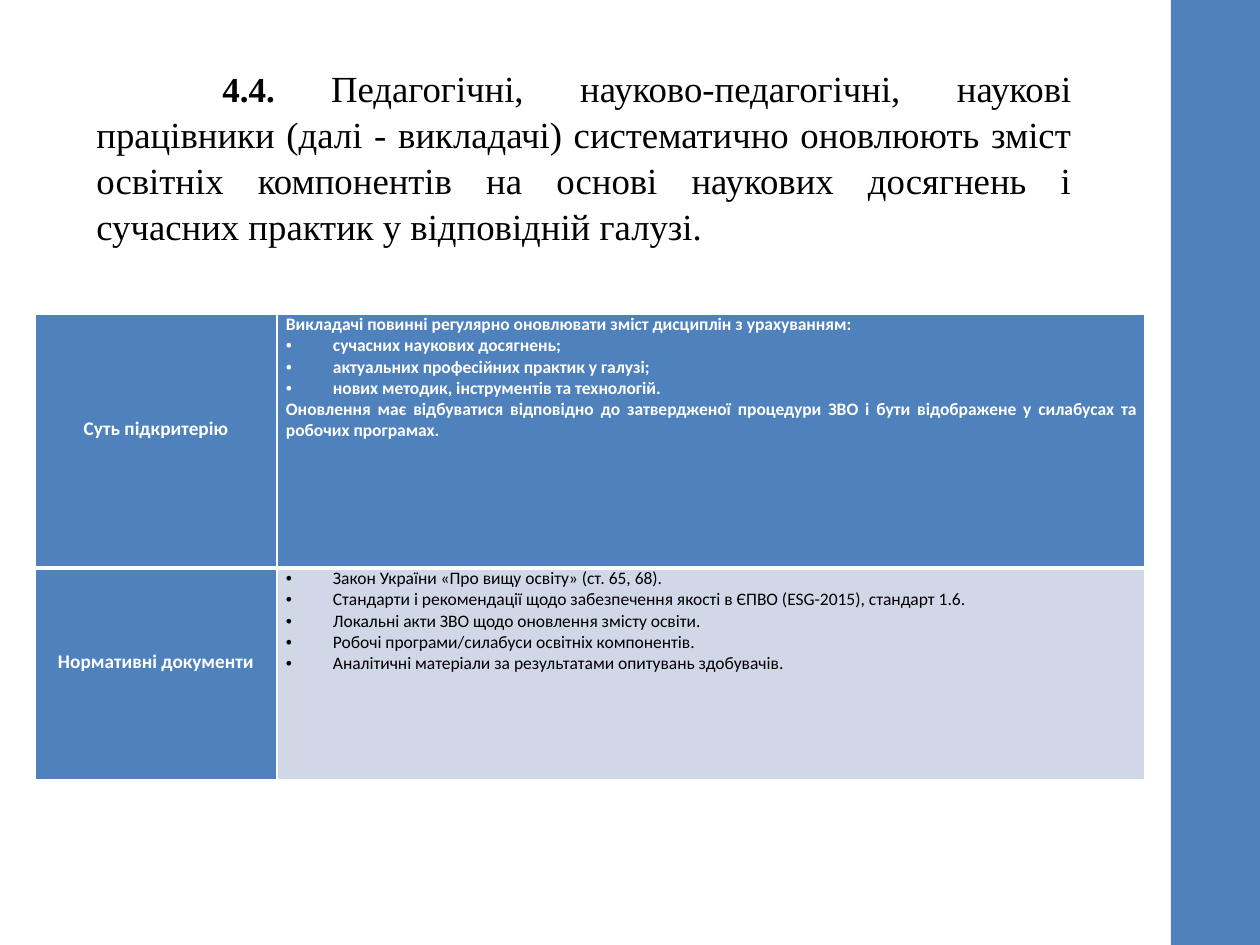
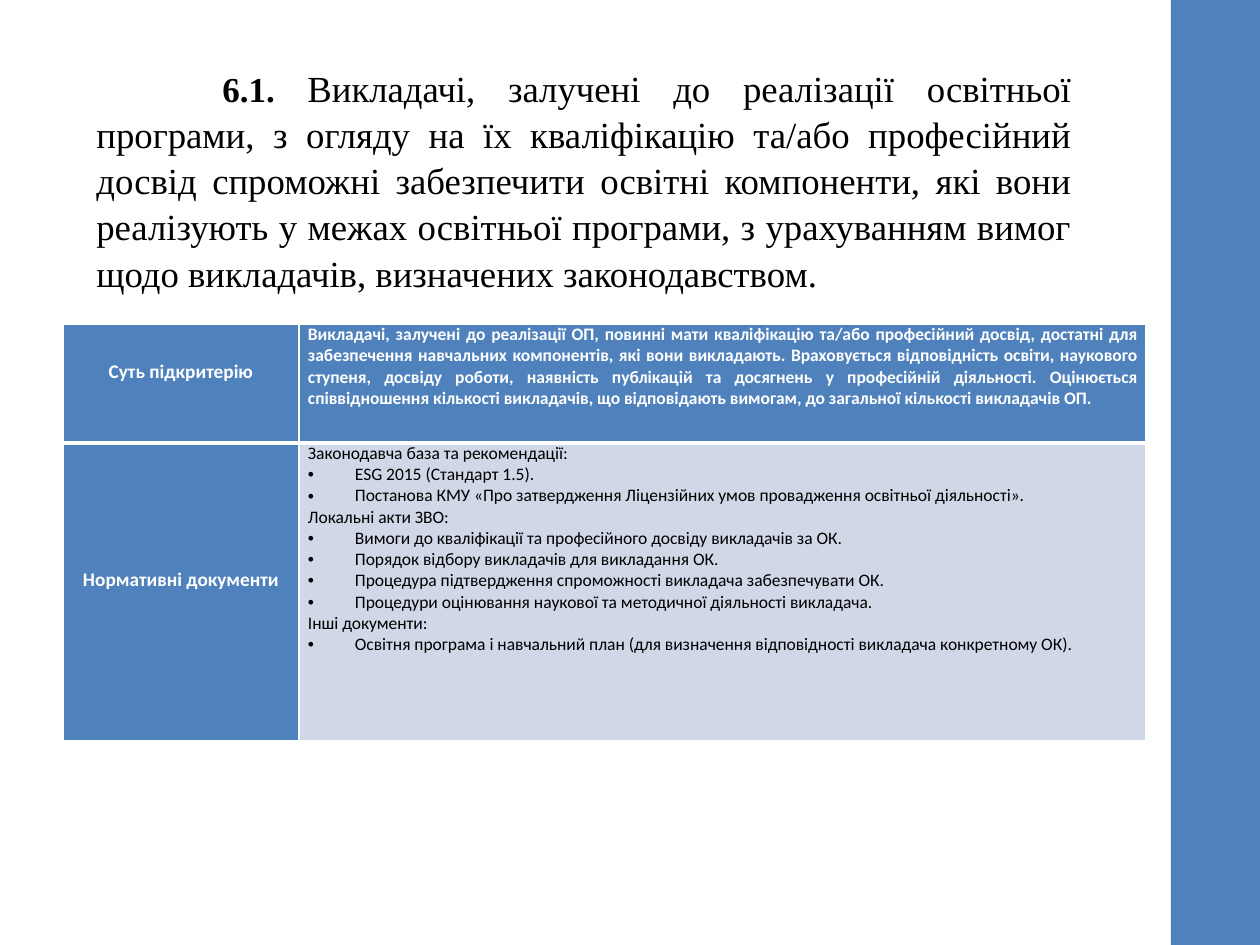
from lxml.etree import SubElement, Element
from pptx import Presentation
from pptx.dml.color import RGBColor
from pptx.enum.shapes import MSO_SHAPE
from pptx.enum.text import MSO_ANCHOR as Anchor, PP_ALIGN as Align
from pptx.oxml.ns import qn
from pptx.util import Pt

EMU_PER_PX = 914400 / 126
BLUE = RGBColor(0x4F, 0x81, 0xBD)
PALE = RGBColor(0xD0, 0xD8, 0xE8)
WHITE = RGBColor(0xFF, 0xFF, 0xFF)
BLACK = RGBColor(0, 0, 0)

SERIF = {"name": "Times New Roman"}
NUMBER = {**SERIF, "size": Pt(20), "bold": True}
HEADING = {**SERIF, "size": Pt(21), "bold": False}
LABEL = {"name": "Calibri", "size": Pt(11), "bold": True}
ESSENCE = {"name": "Calibri", "size": Pt(10), "bold": True}
DOCUMENT = {**ESSENCE, "bold": False}

BULLET = "• "
LABEL_LIFT = 27

CRITERIA = [
    {
        "number": "4.4.",
        "title": "Педагогічні, науково-педагогічні, наукові працівники (далі - викладачі) "
                 "систематично оновлюють зміст освітніх компонентів на основі наукових "
                 "досягнень і сучасних практик у відповідній галузі.",
        "title_height": 198,
        "corner": (35, 314), "columns": (242, 868), "rows": (254, 212),
        "essence": [
            "Викладачі повинні регулярно оновлювати зміст дисциплін з урахуванням:",
            "• сучасних наукових досягнень;",
            "• актуальних професійних практик у галузі;",
            "• нових методик, інструментів та технологій.",
            "Оновлення має відбуватися відповідно до затвердженої процедури ЗВО і бути "
            "відображене у силабусах та робочих програмах.",
        ],
        "documents": [
            "• Закон України «Про вищу освіту» (ст. 65, 68).",
            "• Стандарти і рекомендації щодо забезпечення якості в ЄПВО (ESG-2015), стандарт 1.6.",
            "• Локальні акти ЗВО щодо оновлення змісту освіти.",
            "• Робочі програми/силабуси освітніх компонентів.",
            "• Аналітичні матеріали за результатами опитувань здобувачів.",
        ],
    },
    {
        "number": "6.1.",
        "title": "Викладачі, залучені до реалізації освітньої програми, з огляду на їх "
                 "кваліфікацію та/або професійний досвід спроможні забезпечити освітні "
                 "компоненти, які вони реалізують у межах освітньої програми, з урахуванням "
                 "вимог щодо викладачів, визначених законодавством.",
        "title_height": 248,
        "corner": (63, 324), "columns": (236, 847), "rows": (119, 298),
        "essence": [
            "Викладачі, залучені до реалізації ОП, повинні мати кваліфікацію та/або "
            "професійний досвід, достатні для забезпечення навчальних компонентів, які вони "
            "викладають. Враховується відповідність освіти, наукового ступеня, досвіду роботи, "
            "наявність публікацій та досягнень у професійній діяльності. Оцінюється "
            "співвідношення кількості викладачів, що відповідають вимогам, до загальної "
            "кількості викладачів ОП.",
        ],
        "documents": [
            "Законодавча база та рекомендації:",
            "• ESG 2015 (Стандарт 1.5).",
            "• Постанова КМУ «Про затвердження Ліцензійних умов провадження освітньої діяльності».",
            "Локальні акти ЗВО:",
            "• Вимоги до кваліфікації та професійного досвіду викладачів за ОК.",
            "• Порядок відбору викладачів для викладання ОК.",
            "• Процедура підтвердження спроможності викладача забезпечувати ОК.",
            "• Процедури оцінювання наукової та методичної діяльності викладача.",
            "Інші документи:",
            "• Освітня програма і навчальний план (для визначення відповідності викладача "
            "конкретному ОК).",
        ],
    },
]


def px(length):
    return round(length * EMU_PER_PX)


def set_all(target, values):
    for name, value in values.items():
        setattr(target, name, value)


def add_run(paragraph, text, font, color):
    run = paragraph.add_run()
    run.text = text
    set_all(run.font, font)
    run.font.color.rgb = color


def set_indent(paragraph, left, first_line):
    properties = paragraph._p.get_or_add_pPr()
    properties.set("marL", str(px(left)))
    properties.set("indent", str(px(first_line)))
    return properties


def add_title(slide, number, text, height):
    frame = slide.shapes.add_textbox(px(84), px(57), px(1000), px(height)).text_frame
    frame.word_wrap = True
    paragraph = frame.paragraphs[0]
    set_indent(paragraph, 0, 126)
    set_all(paragraph, {"alignment": Align.JUSTIFY, "line_spacing": 1.05})
    add_run(paragraph, number + " ", NUMBER, BLACK)
    add_run(paragraph, text, HEADING, BLACK)


def add_side_band(slide):
    band = slide.shapes.add_shape(MSO_SHAPE.RECTANGLE, px(1171), 0, px(89), px(945))
    band.shadow.inherit = False
    band.fill.solid()
    band.fill.fore_color.rgb = BLUE
    band.line.fill.background()


def set_borders(cell, bottom_width):
    """White edges on all sides; they must precede the cell's fill."""
    properties = cell._tc.get_or_add_tcPr()
    for position, side in enumerate(("lnL", "lnR", "lnT", "lnB")):
        width = bottom_width if side == "lnB" else 1
        line = Element(qn(f"a:{side}"), w=str(Pt(width)))
        fill = SubElement(line, qn("a:solidFill"))
        SubElement(fill, qn("a:srgbClr"), val=str(WHITE))
        properties.insert(position, line)


def style_cell(cell, fill_color, anchor, lift, bottom_width):
    cell.fill.solid()
    cell.fill.fore_color.rgb = fill_color
    set_all(cell, {"margin_left": px(9), "margin_right": px(9), "margin_top": 0,
                   "margin_bottom": px(lift), "vertical_anchor": anchor})
    set_borders(cell, bottom_width)


def fill_label(cell, text, bottom_width):
    style_cell(cell, BLUE, Anchor.MIDDLE, LABEL_LIFT, bottom_width)
    paragraph = cell.text_frame.paragraphs[0]
    set_all(paragraph, {"alignment": Align.CENTER, "line_spacing": 1.15})
    add_run(paragraph, text, LABEL, WHITE)


def fill_details(cell, lines, font, color, fill_color, bottom_width):
    """Write one paragraph a line; a leading bullet makes it a list item."""
    style_cell(cell, fill_color, Anchor.TOP, 0, bottom_width)
    frame = cell.text_frame
    for index, line in enumerate(lines):
        paragraph = frame.add_paragraph() if index else frame.paragraphs[0]
        paragraph.alignment = Align.JUSTIFY
        if line.startswith(BULLET):
            properties = set_indent(paragraph, 47, -47)
            SubElement(properties, qn("a:buFont"), typeface="Arial")
            SubElement(properties, qn("a:buChar"), char=BULLET.strip())
        add_run(paragraph, line.removeprefix(BULLET), font, color)


def add_criterion_table(slide, criterion):
    columns, rows = criterion["columns"], criterion["rows"]
    left, top = criterion["corner"]
    table = slide.shapes.add_table(2, 2, px(left), px(top),
                                   px(sum(columns)), px(sum(rows))).table
    for column, width in zip(table.columns, columns):
        column.width = px(width)
    for row, height in zip(table.rows, rows):
        row.height = px(height)
    contents = [
        ("Суть підкритерію", criterion["essence"], ESSENCE, WHITE, BLUE, 3),
        ("Нормативні документи", criterion["documents"], DOCUMENT, BLACK, PALE, 1),
    ]
    for index, (label, lines, font, color, fill_color, bottom_width) in enumerate(contents):
        fill_label(table.cell(index, 0), label, bottom_width)
        fill_details(table.cell(index, 1), lines, font, color, fill_color, bottom_width)


def main():
    presentation = Presentation()
    set_all(presentation, {"slide_width": px(1260), "slide_height": px(945)})
    for criterion in CRITERIA:
        slide = presentation.slides.add_slide(presentation.slide_layouts[6])
        add_title(slide, criterion["number"], criterion["title"], criterion["title_height"])
        add_side_band(slide)
        add_criterion_table(slide, criterion)
    presentation.save("out.pptx")


if __name__ == "__main__":
    main()
